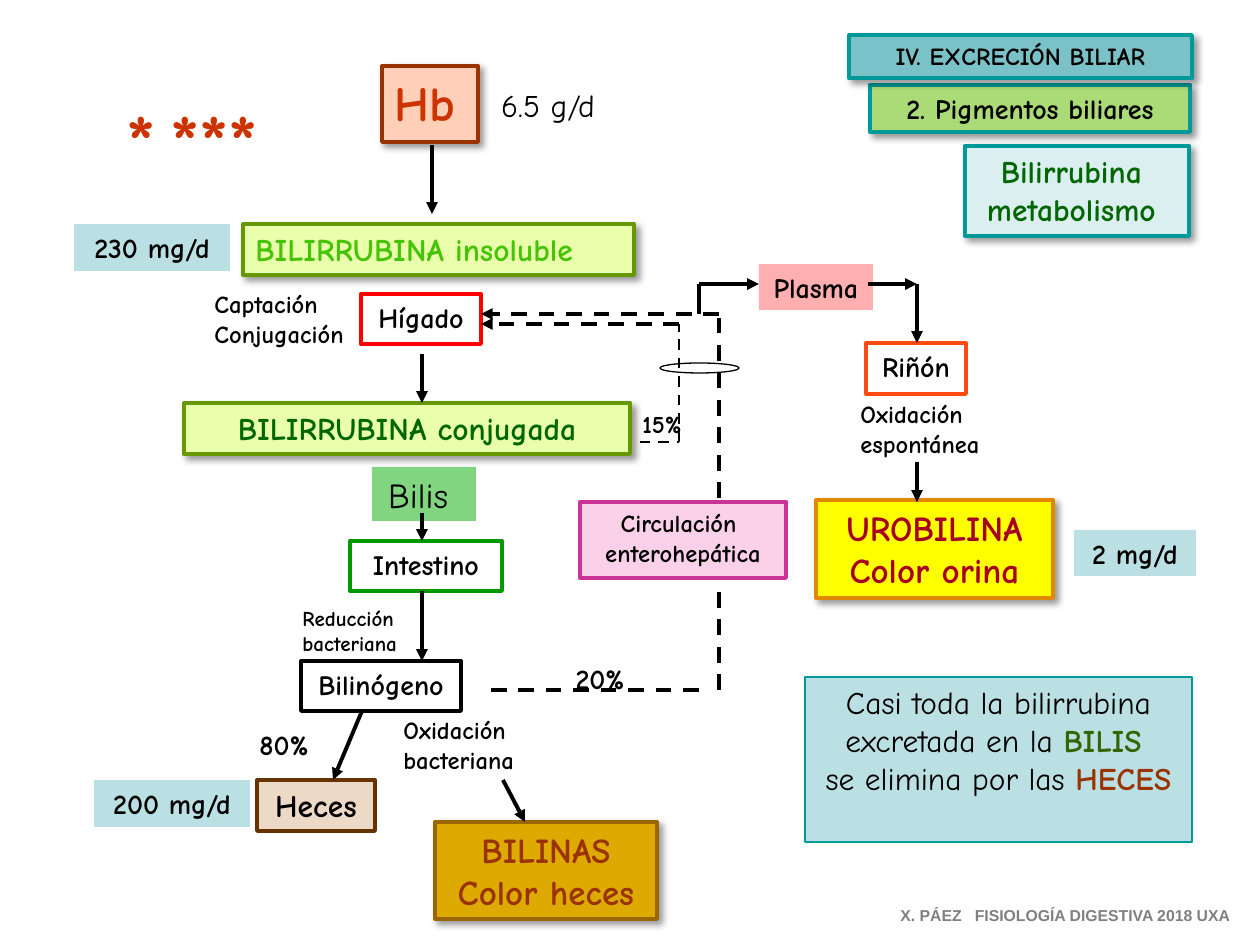
from lxml.etree import SubElement
from pptx import Presentation
from pptx.dml.color import RGBColor
from pptx.enum.dml import MSO_LINE
from pptx.enum.shapes import MSO_CONNECTOR, MSO_SHAPE
from pptx.enum.text import MSO_ANCHOR, PP_ALIGN
from pptx.oxml.ns import qn
from pptx.util import Emu, Pt

PX = 914400 / 126
FONT = "Comic Neue"

BLACK = RGBColor(0x00, 0x00, 0x00)
GRAY = RGBColor(0x80, 0x80, 0x80)
RED = RGBColor(0xFF, 0x00, 0x00)
BRICK = RGBColor(0xCC, 0x33, 0x00)
RUST = RGBColor(0x99, 0x33, 0x00)
PEACH = RGBColor(0xFF, 0xCF, 0xB7)
ORANGE = RGBColor(0xFF, 0x4A, 0x11)
PINK = RGBColor(0xFF, 0xAF, 0xAF)
CRIMSON = RGBColor(0xA5, 0x00, 0x21)
YELLOW = RGBColor(0xFF, 0xFF, 0x00)
AMBER = RGBColor(0xE2, 0x87, 0x00)
GOLD = RGBColor(0xDE, 0xA9, 0x00)
OCHRE = RGBColor(0x99, 0x66, 0x00)
BROWN = RGBColor(0x66, 0x33, 0x00)
SAND = RGBColor(0xEC, 0xD9, 0xC6)
LIME = RGBColor(0xE9, 0xFF, 0xAB)
OLIVE = RGBColor(0x66, 0x99, 0x00)
BRIGHT_GREEN = RGBColor(0x45, 0xC4, 0x06)
DARK_GREEN = RGBColor(0x00, 0x66, 0x00)
MOSS = RGBColor(0x33, 0x66, 0x00)
GREEN = RGBColor(0x00, 0x99, 0x00)
SOFT_GREEN = RGBColor(0x81, 0xD5, 0x81)
APPLE = RGBColor(0xAB, 0xDB, 0x77)
TEAL = RGBColor(0x00, 0x99, 0x99)
AQUA = RGBColor(0x7A, 0xC2, 0xC8)
PALE_AQUA = RGBColor(0xBB, 0xE0, 0xE3)
ICE = RGBColor(0xDC, 0xEF, 0xF0)
MAGENTA = RGBColor(0xCC, 0x33, 0x99)
LILAC = RGBColor(0xFB, 0xD1, 0xEA)

RAISED_BOXES = [
    ("BILINAS\nColor heces", (435, 822, 222, 97), 20, RUST, GOLD, OCHRE),
    ("UROBILINA\nColor orina", (816, 500, 237, 98), 20, CRIMSON, YELLOW, AMBER),
    ("BILIRRUBINA conjugada", (184, 403, 446, 51), 18, DARK_GREEN, LIME, OLIVE),
    ("Bilirrubina \nmetabolismo ", (965, 146, 224, 90), 18, DARK_GREEN, ICE, TEAL),
    ("2. Pigmentos biliares", (870, 85, 320, 47), 16, BLACK, APPLE, TEAL),
    ("IV. EXCRECIÓN BILIAR", (849, 35, 343, 43), 14, BLACK, AQUA, TEAL),
]
FLAT_BOXES = [
    ("Hígado", (361, 294, 120, 50), 16, None, RED),
    ("Intestino", (350, 541, 152, 50), 16, None, GREEN),
    ("Bilinógeno", (301, 661, 160, 50), 16, None, BLACK),
    ("Heces", (257, 780, 118, 51), 18, SAND, BROWN),
    ("Riñón", (866, 343, 100, 51), 16, None, ORANGE),
    ("Plasma", (759, 264, 114, 46), 16, PINK, None),
    ("230 mg/d", (74, 224, 156, 47), 16, PALE_AQUA, None),
    ("200 mg/d", (94, 780, 156, 47), 16, PALE_AQUA, None),
    ("2 mg/d", (1074, 530, 122, 46), 16, PALE_AQUA, None),
]
NOTES = [
    ("Captación\nConjugación", (202, 283, 160, 72), 14),
    ("Oxidación\nbacteriana", (391, 709, 151, 72), 14),
    ("Oxidación\nespontánea", (848, 393, 155, 72), 14),
    ("Reducción\nbacteriana", (290, 599, 132, 63), 12),
]
PERCENTS = [
    ("80%", (243, 721, 82, 47), 16),
    ("20%", (559, 655, 82, 47), 16),
    ("15%", (624, 403, 76, 42), 14),
]
ARROWS = [
    [(432, 145), (432, 214)],
    [(422, 354), (422, 403)],
    [(422, 513), (422, 541)],
    [(422, 591), (422, 661)],
    [(362, 711), (333, 780)],
    [(503, 780), (525, 822)],
    [(699, 314), (699, 284), (759, 284)],
    [(868, 284), (917, 284)],
    [(917, 284), (917, 343)],
    [(917, 462), (917, 502)],
]


def px(*values):
    return [Emu(round(v * PX)) for v in values]


def add_shadow(effects, alpha=40000):
    shadow = SubElement(effects, qn("a:outerShdw"), blurRad="50800",
                        dist="38100", dir="2700000", algn="tl", rotWithShape="0")
    color = SubElement(shadow, qn("a:srgbClr"), val="000000")
    SubElement(color, qn("a:alpha"), val=str(alpha))


def style_font(font, size, color, bold=True, name=FONT):
    font.name = name
    font.size = Pt(size)
    font.bold = bold
    font.color.rgb = color


def write(sp, text, size, color=BLACK, bold=True, align=PP_ALIGN.CENTER, name=FONT):
    tf = sp.text_frame
    tf.word_wrap = True
    tf.vertical_anchor = MSO_ANCHOR.TOP
    tf.text = text
    for p in tf.paragraphs:
        p.alignment = align
        style_font(p.font, size, color, bold, name)


def add_box(s, box, fill=None, line=None, width=2.25, raised=False, kind=MSO_SHAPE.RECTANGLE):
    sp = s.shapes.add_shape(kind, *px(*box))
    if fill is None:
        sp.fill.background()
    else:
        sp.fill.solid()
        sp.fill.fore_color.rgb = fill
    if line is None:
        sp.line.fill.background()
    else:
        sp.line.color.rgb = line
        sp.line.width = Pt(width)
    sp.shadow.inherit = False
    if raised:
        add_shadow(sp._element.spPr.find(qn("a:effectLst")))
    return sp


def add_label(s, text, box, size, **options):
    sp = s.shapes.add_textbox(*px(*box))
    write(sp, text, size, **options)
    return sp


def add_route(s, points, width=2.25, dashed=False, arrow=True):
    for start, end in zip(points, points[1:]):
        line = s.shapes.add_connector(MSO_CONNECTOR.STRAIGHT, *px(*start, *end))
        line.line.color.rgb = BLACK
        line.line.width = Pt(width)
        if dashed:
            line.line.dash_style = MSO_LINE.DASH
        if arrow and end == points[-1]:
            SubElement(line.line._get_or_add_ln(), qn("a:tailEnd"), type="triangle")
        SubElement(line._element.spPr, qn("a:effectLst"))


def add_stars(s, text, box):
    sp = add_label(s, text, box, 44, color=BRICK, align=PP_ALIGN.LEFT)
    r = sp.text_frame.paragraphs[0].runs[0]
    add_shadow(SubElement(r._r.get_or_add_rPr(), qn("a:effectLst")), 100000)


def add_summary(s):
    sp = add_box(s, (805, 677, 387, 165), PALE_AQUA, TEAL, 0.75)
    tf = sp.text_frame
    write(sp, "Casi toda la bilirrubina excretada en la \nse elimina por las ", 18, bold=False)
    for p, word, color in zip(tf.paragraphs, ("BILIS", "HECES"), (MOSS, RUST)):
        r = p.add_run()
        r.text = word
        style_font(r.font, 18, color)
    r = tf.paragraphs[0].add_run()
    r.text = " "
    style_font(r.font, 16, BLACK)


def main():
    prs = Presentation()
    prs.slide_width, prs.slide_height = px(1260, 945)
    s = prs.slides.add_slide(prs.slide_layouts[6])

    for text, box, size, color, fill, line in RAISED_BOXES:
        write(add_box(s, box, fill, line, raised=True), text, size, color)
    for text, box, size, color, fill, line in [
        ("Hb", (382, 66, 96, 76), 28, BRICK, PEACH, RUST),
        ("BILIRRUBINA insoluble", (243, 224, 391, 51), 18, BRIGHT_GREEN, LIME, OLIVE),
    ]:
        sp = add_box(s, box, fill, line, raised=True)
        write(sp, text, size, color, align=PP_ALIGN.LEFT)
    for text, box, size, fill, line in FLAT_BOXES:
        write(add_box(s, box, fill, line), text, size)
    write(add_box(s, (372, 467, 104, 54), SOFT_GREEN), "Bilis ", 20, bold=False)

    for points in ARROWS:
        add_route(s, points)
    add_route(s, [(491, 690), (709, 690)], dashed=True, arrow=False)
    add_route(s, [(719, 690), (719, 314), (481, 314)], dashed=True)
    add_route(s, [(640, 442), (679, 442), (679, 324)], 1.5, dashed=True, arrow=False)
    add_route(s, [(679, 324), (481, 324)], dashed=True)
    add_box(s, (660, 363, 79, 10), line=BLACK, width=0.75, kind=MSO_SHAPE.OVAL)

    circulation = add_box(s, (580, 502, 206, 76), LILAC, MAGENTA)
    write(circulation, "Circulación \nenterohepática", 14)
    for text, box, size in NOTES:
        add_label(s, text, box, size, align=PP_ALIGN.LEFT)
    for text, box, size in PERCENTS:
        add_label(s, text, box, size)
    add_label(s, "6.5 g/d", (481, 80, 134, 50), 18, bold=False)
    add_stars(s, "*", (114, 86, 65, 105))
    add_stars(s, "***", (158, 86, 149, 105))
    add_summary(s)
    add_label(s, "X. PÁEZ   FISIOLOGÍA DIGESTIVA 2018 UXA", (888, 900, 360, 32), 9,
              color=GRAY, align=PP_ALIGN.LEFT, name="Arial")
    prs.save("out.pptx")


if __name__ == "__main__":
    main()
